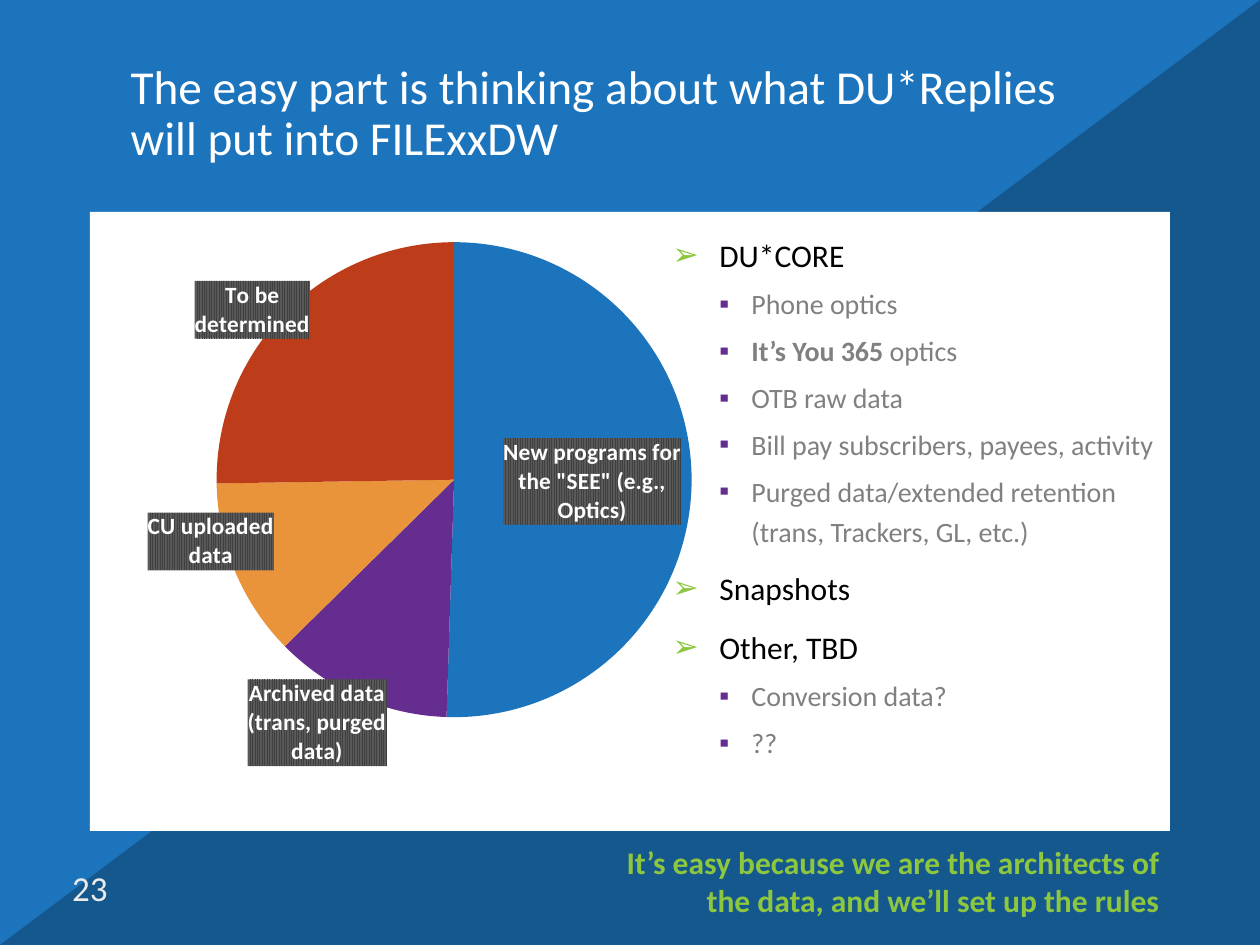
import copy
import lxml.etree
import pptx
import pptx.chart.data
import pptx.dml.color
import pptx.enum.chart
import pptx.enum.shapes
import pptx.enum.text
import pptx.oxml
import pptx.oxml.ns
import pptx.util

THEME = {
    "font": "Calibri",
    "blue": "1C75BC", "navy": "15588D", "white": "FFFFFF", "black": "000000",
    "grey": "808080", "pale": "EBEBEB", "green": "8DC63F", "purple": "662D91",
    "orange": "E9943A", "red": "BD3C1A", "label_dark": "404040", "label_light": "595959",
    "title": 27, "topic": 18, "detail": 16, "label": 13.3, "number": 20,
}
SCALE = 914400 / 126


def px(*lengths):
    return [pptx.util.Emu(round(length * SCALE)) for length in lengths]


def style(font, size, color, bold=False):
    font.name = THEME["font"]
    font.size = pptx.util.Pt(THEME[size])
    font.color.rgb = pptx.dml.color.RGBColor.from_string(THEME[color])
    font.bold = bold


qn = pptx.oxml.ns.qn
presentation = pptx.Presentation()
presentation.slide_width, presentation.slide_height = px(1260, 945)
slide = presentation.slides.add_slide(presentation.slide_layouts[5])
slide.background.fill.solid()
slide.background.fill.fore_color.rgb = pptx.dml.color.RGBColor.from_string(THEME["blue"])

kinds = pptx.enum.shapes.MSO_SHAPE
for kind, box, color in [
    (kinds.RIGHT_TRIANGLE, (0, 0, 1260, 945), "navy"),
    (kinds.RECTANGLE, (90, 212, 1080, 619), "white"),
]:
    backdrop = slide.shapes.add_shape(kind, *px(*box))
    backdrop.shadow.inherit = False
    backdrop.fill.solid()
    backdrop.fill.fore_color.rgb = pptx.dml.color.RGBColor.from_string(THEME[color])
    backdrop.line.fill.background()
    if kind == kinds.RIGHT_TRIANGLE:
        backdrop._element.spPr.xfrm.set("flipH", "1")

title = slide.shapes.title
slide.shapes._spTree.append(title._element)
title.left, title.top, title.width, title.height = px(118, 32, 1023, 165)
title.text_frame.text = "The easy part is thinking about what DU*Replies will put into FILExxDW"
title.text_frame.vertical_anchor = pptx.enum.text.MSO_ANCHOR.MIDDLE
heading = title.text_frame.paragraphs[0]
heading.alignment = pptx.enum.text.PP_ALIGN.LEFT
heading.line_spacing = 0.9
style(heading.font, "title", "white")

CHART_WIDTH, CHART_HEIGHT = 759, 617
sources = [
    ('New programs for the "SEE" (e.g., Optics)', 50, "blue", None),
    ("Archived data (trans, purged data)", 12, "purple", (28, -22)),
    ("CU uploaded data", 12, "orange", (44, -60)),
    ("To be determined", 25, "red", (29, 32)),
]
shares = pptx.chart.data.CategoryChartData()
shares.categories = [name for name, share, color, shift in sources]
shares.add_series("Series 1", [share for name, share, color, shift in sources])
pie = slide.shapes.add_chart(
    pptx.enum.chart.XL_CHART_TYPE.PIE, *px(14, 199, CHART_WIDTH, CHART_HEIGHT), shares).chart
pie.has_legend = False
pie.has_title = False
style(pie.font, "label", "white")
pie.plots[0].vary_by_categories = False
slices = pie.plots[0].series[0]

labels = slices.data_labels
labels.show_value = False
labels.show_category_name = True
labels.position = pptx.enum.chart.XL_LABEL_POSITION.BEST_FIT
style(labels.font, "label", "white", True)
for leader in labels._element.findall(qn("c:showLeaderLines")):
    leader.set("val", "0")
label_text = labels._element.find(qn("c:txPr"))
label_fill = pptx.oxml.parse_xml(
    f'<c:spPr {pptx.oxml.ns.nsdecls("c", "a")}><a:pattFill prst="narVert">'
    f'<a:fgClr><a:srgbClr val="{THEME["label_dark"]}"/></a:fgClr>'
    f'<a:bgClr><a:srgbClr val="{THEME["label_light"]}"/></a:bgClr>'
    '</a:pattFill><a:ln><a:noFill/></a:ln></c:spPr>')
label_text.addprevious(label_fill)

for index, (name, share, color, shift) in enumerate(sources):
    point = slices.points[index]
    point.format.fill.solid()
    point.format.fill.fore_color.rgb = pptx.dml.color.RGBColor.from_string(THEME[color])
    point.format.line.fill.background()
    if shift:
        point.data_label.position = pptx.enum.chart.XL_LABEL_POSITION.OUTSIDE_END
        label = labels._element.findall(qn("c:dLbl"))[-1]
        label.find(qn("c:showVal")).set("val", "0")
        label.find(qn("c:showCatName")).set("val", "1")
        for tag in ("c:layout", "c:spPr", "c:txPr"):
            for old in label.findall(qn(tag)):
                label.remove(old)
        label.find(qn("c:idx")).addnext(pptx.oxml.parse_xml(
            f'<c:layout {pptx.oxml.ns.nsdecls("c")}><c:manualLayout>'
            f'<c:x val="{shift[0] / CHART_WIDTH:.2f}"/><c:y val="{shift[1] / CHART_HEIGHT:.2f}"/>'
            '</c:manualLayout></c:layout>'))
        place = label.find(qn("c:dLblPos"))
        place.addprevious(copy.deepcopy(label_fill))
        place.addprevious(copy.deepcopy(label_text))

plot_area = pie._chartSpace.chart.plotArea
for old in plot_area.findall(qn("c:layout")):
    plot_area.remove(old)
plot_area.insert(0, pptx.oxml.parse_xml(
    f'<c:layout {pptx.oxml.ns.nsdecls("c")}><c:manualLayout><c:layoutTarget val="inner"/>'
    '<c:xMode val="edge"/><c:yMode val="edge"/><c:x val="0.26"/><c:y val="0.07"/>'
    '<c:w val="0.64"/><c:h val="0.77"/></c:manualLayout></c:layout>'))

levels = [
    {"size": "topic", "color": "black", "before": 7.5, "left": 47, "hang": 47,
     "bullet": "➢", "bullet_color": "green"},
    {"size": "detail", "color": "grey", "before": 3.8, "left": 79, "hang": 32,
     "bullet": "▪", "bullet_color": "purple"},
]
outline = [
    (0, ["DU*CORE"]),
    (1, ["Phone optics"]),
    (1, ["It’s You 365 ", "optics"]),
    (1, ["OTB raw data"]),
    (1, ["Bill pay subscribers, payees, activity"]),
    (1, ["Purged data/extended retention (trans, Trackers, GL, etc.)"]),
    (0, ["Snapshots"]),
    (0, ["Other, TBD"]),
    (1, ["Conversion data?"]),
    (1, ["??"]),
]
contents = slide.shapes.add_textbox(*px(660, 222, 512, 571)).text_frame
contents.word_wrap = True
for index, (depth, parts) in enumerate(outline):
    level = levels[depth]
    entry = contents.add_paragraph() if index else contents.paragraphs[0]
    entry.level = depth
    entry.line_spacing = 1.2
    entry.space_before = pptx.util.Pt(level["before"])
    style(entry.font, level["size"], level["color"])
    for part in parts:
        entry.add_run().text = part
    if len(parts) > 1:
        entry.runs[0].font.bold = True
    properties = entry._p.get_or_add_pPr()
    margin, hang = px(level["left"], level["hang"])
    properties.set("marL", str(margin))
    properties.set("indent", str(-hang))
    bullet_color = lxml.etree.Element(qn("a:buClr"))
    lxml.etree.SubElement(bullet_color, qn("a:srgbClr"), val=THEME[level["bullet_color"]])
    bullet_font = lxml.etree.Element(qn("a:buFont"), typeface=THEME["font"])
    bullet = lxml.etree.Element(qn("a:buChar"), char=level["bullet"])
    defaults = properties.find(qn("a:defRPr"))
    for part in (bullet_color, bullet_font, bullet):
        defaults.addprevious(part)

aligns, anchors = pptx.enum.text.PP_ALIGN, pptx.enum.text.MSO_ANCHOR
for text, box, align, anchor, size, color, bold in [
    ("23", (44, 863, 92, 50), aligns.CENTER, anchors.MIDDLE, "number", "pale", False),
    ("It’s easy because we are the architects of the data, and we’ll set up the rules",
     (614, 833, 558, 92), aligns.RIGHT, anchors.BOTTOM, "topic", "green", True),
]:
    footer = slide.shapes.add_textbox(*px(*box)).text_frame
    footer.word_wrap = True
    footer.vertical_anchor = anchor
    footer.text = text
    footer.paragraphs[0].alignment = align
    style(footer.paragraphs[0].font, size, color, bold)

presentation.save("out.pptx")
